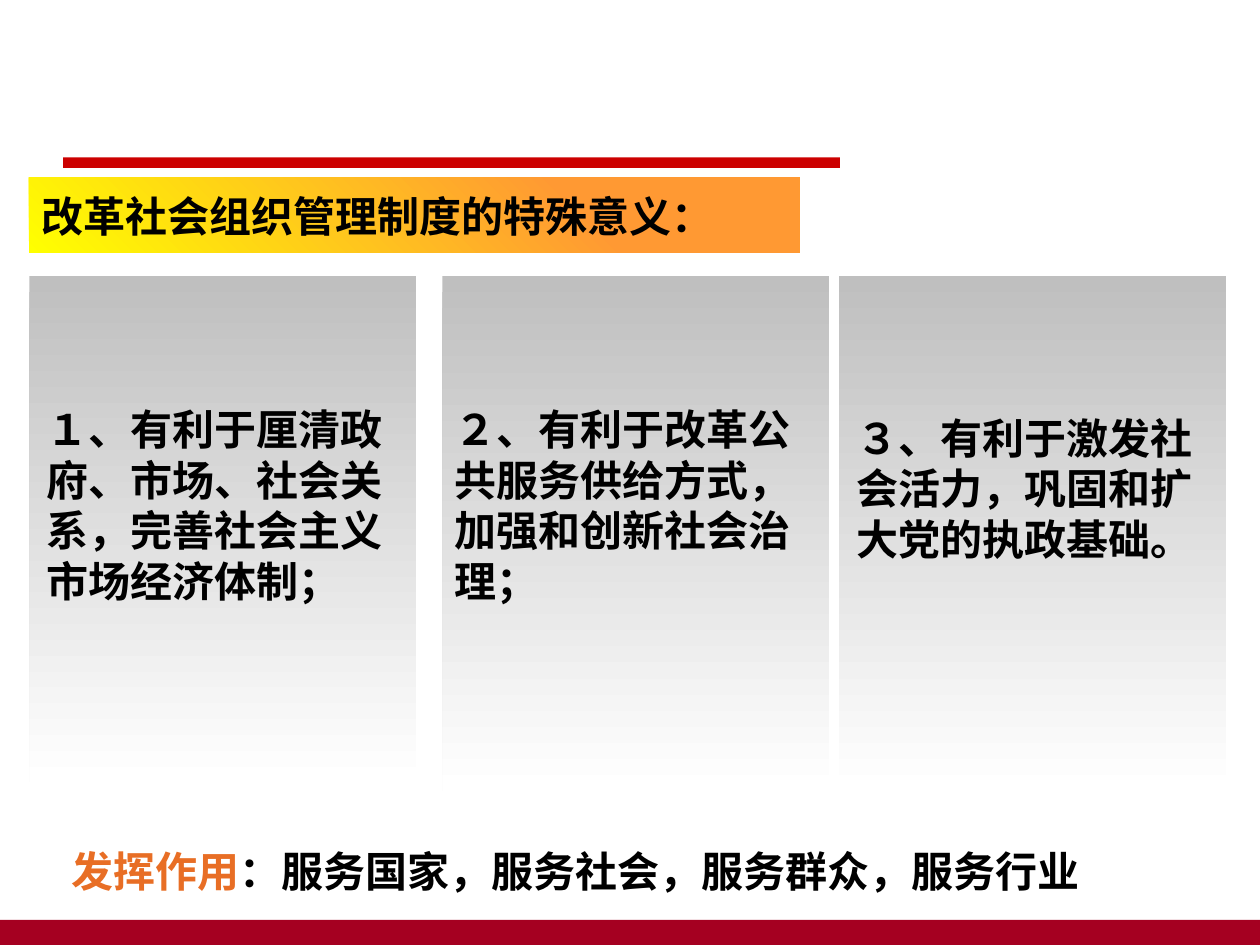
from lxml.etree import SubElement
from pptx import Presentation
from pptx.dml.color import RGBColor
from pptx.enum.shapes import MSO_SHAPE
from pptx.enum.text import MSO_ANCHOR, PP_ALIGN
from pptx.oxml.ns import qn
from pptx.util import Pt

BLACK = RGBColor(0x00, 0x00, 0x00)
WHITE = RGBColor(0xFF, 0xFF, 0xFF)
GREY = RGBColor(0xBF, 0xBF, 0xBF)
YELLOW = RGBColor(0xFF, 0xFF, 0x00)
ORANGE = RGBColor(0xFF, 0x99, 0x33)
ACCENT = RGBColor(0xE8, 0x6E, 0x25)
RED = RGBColor(0xCC, 0x00, 0x00)
CRIMSON = RGBColor(0xA5, 0x00, 0x21)

SANS = "Noto Sans CJK SC"
SERIF = "Times New Roman"


class SlideBuilder:
    text_size = 24
    line_height = 28.8

    def __init__(self, slide):
        self.slide = slide

    def rect(self, x, y, w, h):
        sp = self.slide.shapes.add_shape(
            MSO_SHAPE.RECTANGLE, Pt(x), Pt(y), Pt(w), Pt(h))
        sp.shadow.inherit = False
        sp.line.fill.background()
        return sp

    def bar(self, x, y, w, h, color):
        sp = self.rect(x, y, w, h)
        sp.fill.solid()
        sp.fill.fore_color.rgb = color

    def gradient(self, sp, start, end, end_position=1, angle=0):
        sp.fill.gradient()
        sp.fill.gradient_angle = angle
        first, last = sp.fill.gradient_stops
        first.color.rgb = start
        last.color.rgb = end
        last.position = end_position

    def panel(self, x, y, w, h):
        """Panel fading downwards: a lying rectangle turned by 90 degrees."""
        sp = self.rect(x + (w - h) / 2, y + (h - w) / 2, h, w)
        sp.rotation = 90
        self.gradient(sp, GREY, WHITE)

    def banner(self, x, y, w, h, text):
        sp = self.rect(x, y, w, h)
        self.gradient(sp, YELLOW, ORANGE, 0.71, 45)
        self.add_runs(sp.text_frame, [(text, BLACK)], SERIF, MSO_ANCHOR.MIDDLE)

    def text(self, x, y, w, h, runs, font, anchor=MSO_ANCHOR.TOP, lift=0):
        """Text box; lift raises the foot of the area the text is centred in."""
        sp = self.slide.shapes.add_textbox(Pt(x), Pt(y), Pt(w), Pt(h))
        sp.text_frame.margin_bottom = Pt(3.6 + lift)
        self.add_runs(sp.text_frame, runs, font, anchor)

    def add_runs(self, tf, runs, font, anchor):
        tf.word_wrap = True
        tf.vertical_anchor = anchor
        p = tf.paragraphs[0]
        p.alignment = PP_ALIGN.LEFT
        p.line_spacing = Pt(self.line_height)
        for text, color in runs:
            r = p.add_run()
            r.text = text
            r.font.size = Pt(self.text_size)
            r.font.bold = True
            r.font.color.rgb = color
            r.font.name = font
            SubElement(r.font._element, qn("a:ea"), typeface=SANS)


def main():
    prs = Presentation()
    prs.slide_width, prs.slide_height = Pt(720), Pt(540)
    s = SlideBuilder(prs.slides.add_slide(prs.slide_layouts[6]))

    s.bar(0, 525.6, 720, 14.4, CRIMSON)
    s.bar(36, 90, 444, 6, RED)
    s.banner(16.5, 101.5, 440.5, 43, "改革社会组织管理制度的特殊意义：")

    # panel left, panel height, text left, text top, text height, lift, text
    benefits = [
        (16.7, 289.4, 19.4, 171.4, 262.8, s.line_height,
         "１、有利于厘清政府、市场、社会关系，完善社会主义市场经济体制；"),
        (252.7, 294.5, 252.7, 169.2, 267.1, s.line_height,
         "２、有利于改革公共服务供给方式，加强和创新社会治理；"),
        (479.5, 294.5, 482.4, 206.6, 144.7, 0,
         "３、有利于激发社会活力，巩固和扩大党的执政基础。"),
    ]
    for left, height, text_left, text_top, text_height, lift, text in benefits:
        s.panel(left, 157.7, 221, height)
        s.text(text_left, text_top, 218.2, text_height, [(text, BLACK)],
               SANS, MSO_ANCHOR.MIDDLE, lift)

    s.text(33.8, 479.5, 625, 36,
           [("发挥作用", ACCENT),
            ("：服务国家，服务社会，服务群众，服务行业", BLACK)], SERIF)

    prs.save("out.pptx")


if __name__ == "__main__":
    main()
